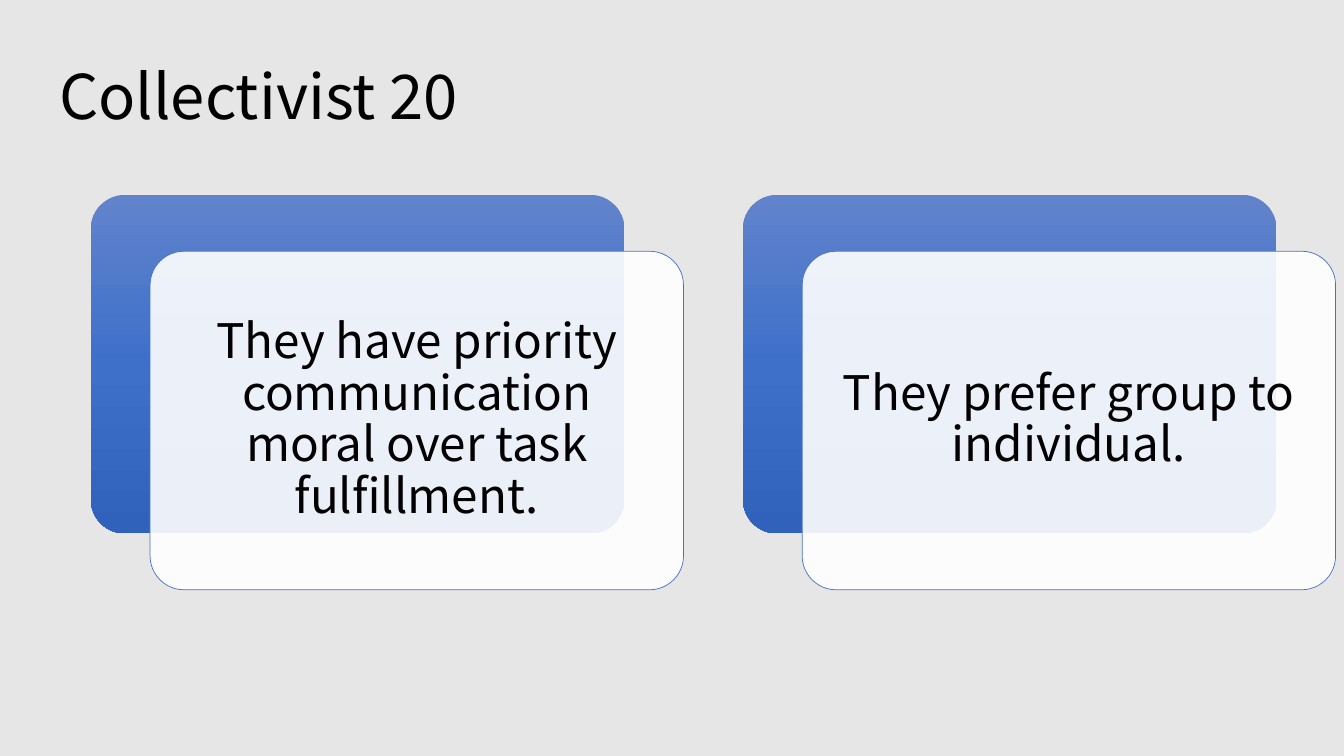
import copy
from dataclasses import dataclass

import lxml.etree
import pptx
import pptx.dml.color
import pptx.enum.shapes
import pptx.enum.text
import pptx.oxml.ns
import pptx.util

Pt = pptx.util.Pt
Anchor = pptx.enum.text.MSO_ANCHOR
Align = pptx.enum.text.PP_ALIGN
qn = pptx.oxml.ns.qn

FONT = "Noto Sans CJK JP"
COLORS = {
    "ground": "E7E6E6",
    "text": "000000",
    "front": "FFFFFF",
    "edge": "4472C4",
    "top": "6183CB",
    "middle": "3E70CA",
    "bottom": "3062BB",
}


@dataclass(frozen=True)
class Box:
    left: float
    top: float
    width: float
    height: float

    def shift(self, right: float, down: float) -> "Box":
        return Box(self.left + right, self.top + down, self.width, self.height)

    def inset(self, gap: float) -> "Box":
        return Box(self.left + gap, self.top + gap,
                   self.width - 2 * gap, self.height - 2 * gap)

    def points(self) -> list[pptx.util.Pt]:
        return [Pt(side) for side in (self.left, self.top, self.width, self.height)]


@dataclass(frozen=True)
class Card:
    text: str
    back: Box


TITLE = Box(35.3, 31, 890, 67.7)
FIRST = Box(64.9, 139.2, 381, 241.8)
STEP = 465.8
CARDS = [
    Card(text, FIRST.shift(index * STEP, 0))
    for index, text in enumerate([
        "They have priority communication moral over task fulfillment.",
        "They prefer group to individual.",
    ])
]


def color(name: str) -> pptx.dml.color.RGBColor:
    return pptx.dml.color.RGBColor.from_string(COLORS[name])


def add_panel(slide: pptx.slide.Slide, box: Box) -> pptx.shapes.autoshape.Shape:
    kind = pptx.enum.shapes.MSO_SHAPE.ROUNDED_RECTANGLE
    panel = slide.shapes.add_shape(kind, *box.points())
    panel.adjustments[0] = 0.1
    panel.shadow.inherit = False
    return panel


def add_back(slide: pptx.slide.Slide, box: Box) -> None:
    panel = add_panel(slide, box)
    panel.line.fill.background()
    panel.fill.gradient()
    panel.fill.gradient_angle = 270
    stops = panel.element.spPr.find(".//" + qn("a:gsLst"))
    stops.insert(1, copy.deepcopy(stops[0]))
    places = (0, 0.5, 1)
    names = ("top", "middle", "bottom")
    for stop, place, name in zip(panel.fill.gradient_stops, places, names):
        stop.position = place
        stop.color.rgb = color(name)


def add_front(slide: pptx.slide.Slide, box: Box) -> None:
    panel = add_panel(slide, box)
    panel.fill.solid()
    panel.fill.fore_color.rgb = color("front")
    paint = panel.element.spPr.find(qn("a:solidFill"))[0]
    lxml.etree.SubElement(paint, qn("a:alpha"), val="90000")
    panel.line.color.rgb = color("edge")
    panel.line.width = Pt(0.5)


def add_text(slide: pptx.slide.Slide, box: Box, text: str, size: float,
             anchor: Anchor, align: Align) -> pptx.text.text.TextFrame:
    frame = slide.shapes.add_textbox(*box.points()).text_frame
    frame.word_wrap = True
    frame.vertical_anchor = anchor
    line = frame.paragraphs[0]
    line.text = text
    line.alignment = align
    line.line_spacing = 0.9
    line.font.name = FONT
    line.font.size = Pt(size)
    line.font.color.rgb = color("text")
    return frame


def add_card(slide: pptx.slide.Slide, card: Card) -> None:
    front = card.back.shift(42.3, 40.3)
    add_back(slide, card.back)
    add_front(slide, front)
    frame = add_text(slide, front.inset(7), card.text, 34,
                     Anchor.MIDDLE, Align.CENTER)
    frame.margin_left = frame.margin_right = Pt(10)
    frame.margin_top = frame.margin_bottom = Pt(10)
    frame.paragraphs[0].space_after = Pt(11.9)


def main() -> None:
    deck = pptx.Presentation()
    deck.slide_width = Pt(960)
    deck.slide_height = Pt(540)
    slide = deck.slides.add_slide(deck.slide_layouts[6])
    slide.background.fill.solid()
    slide.background.fill.fore_color.rgb = color("ground")
    add_text(slide, TITLE, "Collectivist 20", 44, Anchor.BOTTOM, Align.LEFT)
    for card in CARDS:
        add_card(slide, card)
    deck.save("out.pptx")


if __name__ == "__main__":
    main()
